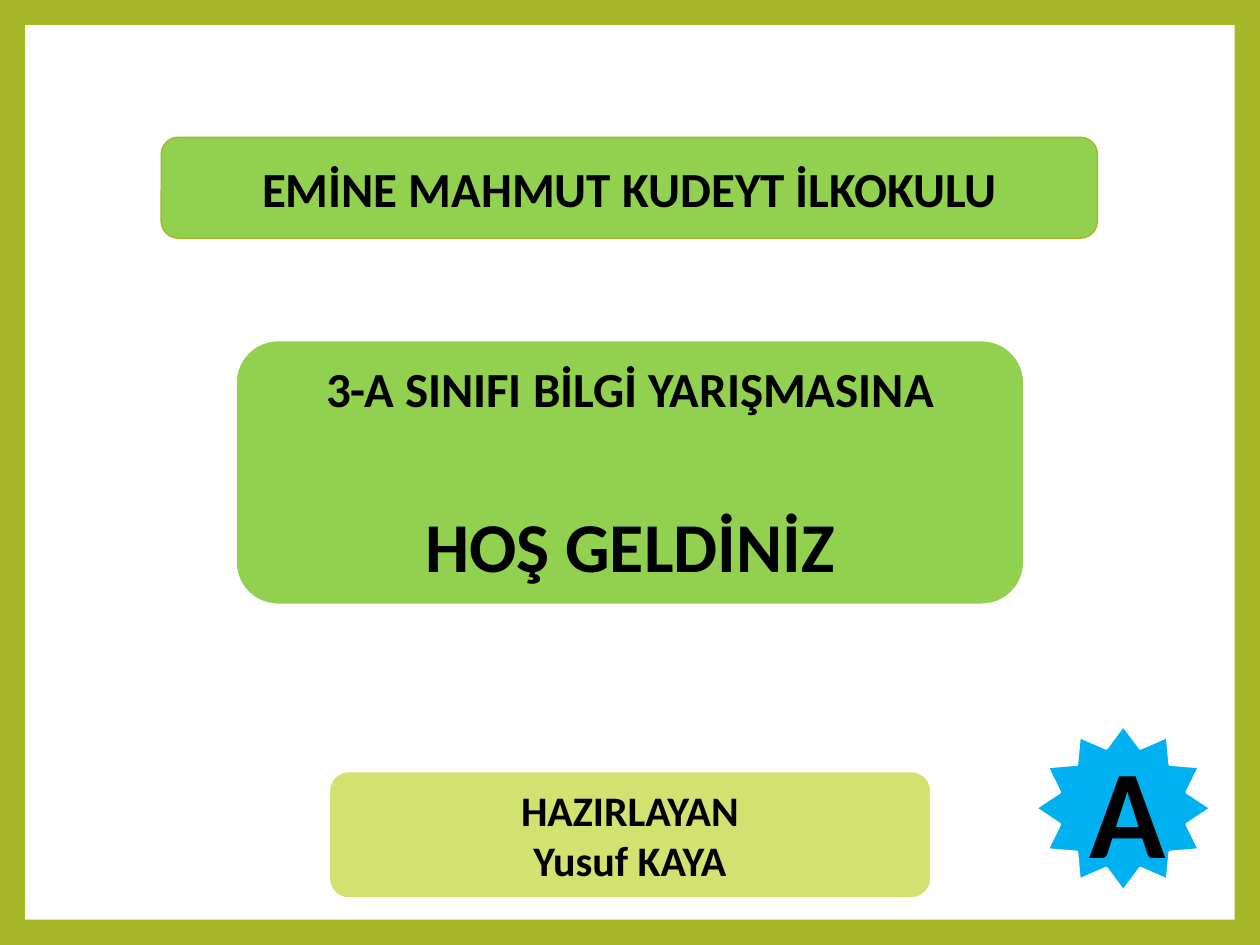
from pptx import Presentation
from pptx.dml.color import RGBColor
from pptx.enum.shapes import MSO_SHAPE
from pptx.enum.text import MSO_ANCHOR, PP_ALIGN
from pptx.util import Inches, Pt

OLIVE = RGBColor(0xA6, 0xB7, 0x27)
GREEN = RGBColor(0x92, 0xD0, 0x50)
LIME = RGBColor(0xD3, 0xE1, 0x71)
BLUE = RGBColor(0x00, 0xB0, 0xF0)
WHITE = RGBColor(0xFF, 0xFF, 0xFF)
BLACK = RGBColor(0x00, 0x00, 0x00)

prs = Presentation()
prs.slide_width, prs.slide_height = Inches(10), Inches(7.5)
s = prs.slides.add_slide(prs.slide_layouts[6])

# Olive background with a white panel inside
s.background.fill.solid()
s.background.fill.fore_color.rgb = OLIVE
panel = s.shapes.add_shape(MSO_SHAPE.RECTANGLE, Inches(0.2), Inches(0.2),
                           Inches(9.6), Inches(7.1))
panel.shadow.inherit = False
panel.fill.solid()
panel.fill.fore_color.rgb = WHITE
panel.line.fill.background()

# Boxes: shape, position, fill, line, line width, paragraphs (text, size, space before)
boxes = [
    (MSO_SHAPE.ROUNDED_RECTANGLE, (1.28, 1.09, 7.43, 0.8), GREEN, OLIVE, 0.79,
     [("EMİNE MAHMUT KUDEYT İLKOKULU", 28, 0)]),
    (MSO_SHAPE.ROUNDED_RECTANGLE, (1.85, 2.68, 6.3, 2.14), GREEN, WHITE, 4.25,
     [("3-A SINIFI BİLGİ YARIŞMASINA", 28, 0), ("HOŞ GELDİNİZ", 40, 49)]),
    (MSO_SHAPE.ROUNDED_RECTANGLE, (2.59, 6.1, 4.82, 1.05), LIME, WHITE, 4.25,
     [("HAZIRLAYAN", 24, 0), ("Yusuf KAYA", 24, 0)]),
    (MSO_SHAPE.STAR_12_POINT, (8.22, 5.76, 1.39, 1.31), BLUE, WHITE, 1.5,
     [("A", 72, 0)]),
]
for kind, place, fill, line, width, paragraphs in boxes:
    sp = s.shapes.add_shape(kind, *[Inches(v) for v in place])
    sp.shadow.inherit = False
    sp.fill.solid()
    sp.fill.fore_color.rgb = fill
    sp.line.color.rgb = line
    sp.line.width = Pt(width)
    tf = sp.text_frame
    tf.word_wrap = True
    tf.vertical_anchor = MSO_ANCHOR.MIDDLE
    for i, (text, size, before) in enumerate(paragraphs):
        p = tf.add_paragraph() if i else tf.paragraphs[0]
        p.alignment = PP_ALIGN.CENTER
        if before:
            p.space_before = Pt(before)
        r = p.add_run()
        r.text = text
        r.font.name = "Calibri"
        r.font.size = Pt(size)
        r.font.bold = True
        r.font.color.rgb = BLACK

prs.save("out.pptx")
